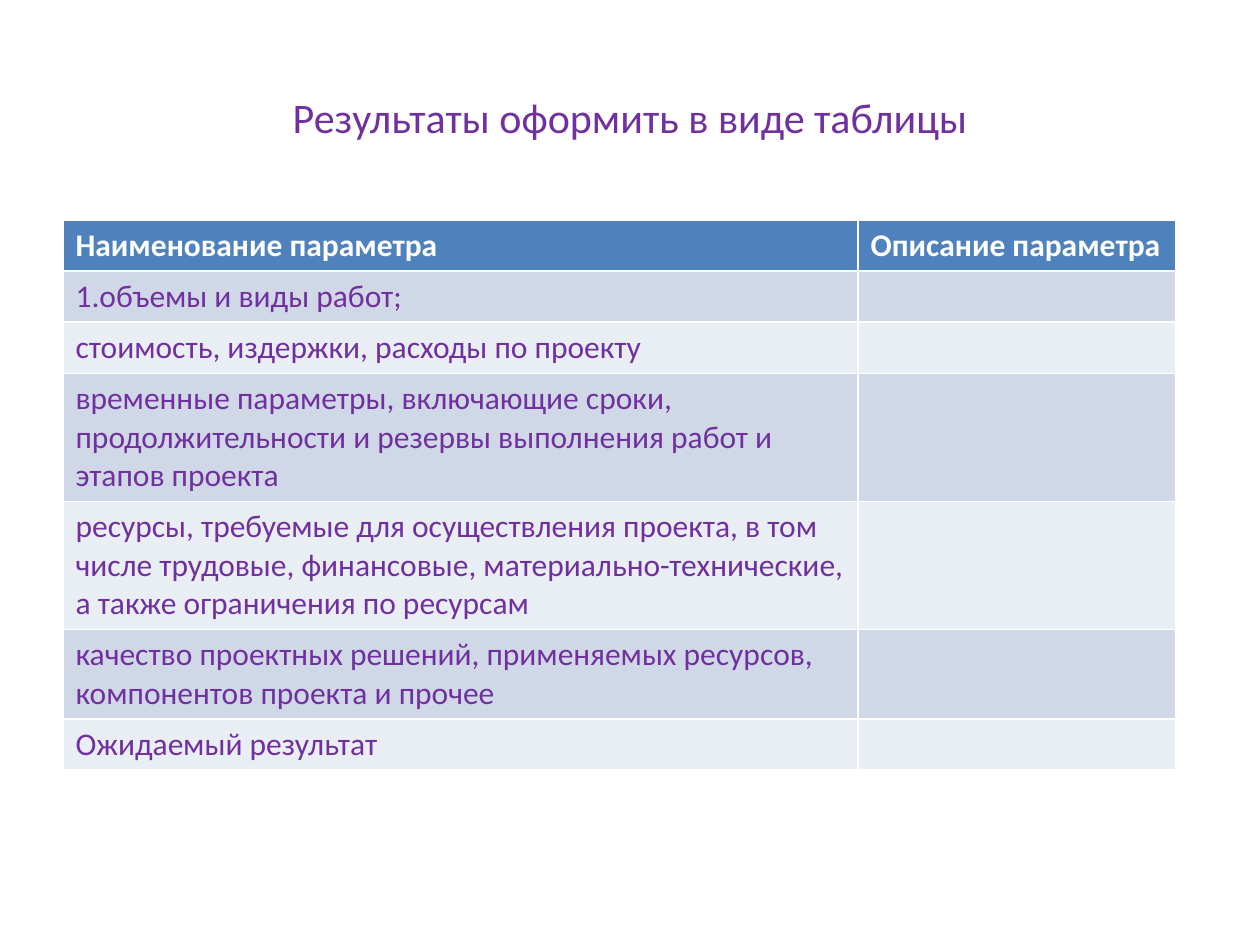
from lxml.etree import SubElement
from pptx import Presentation
from pptx.dml.color import RGBColor
from pptx.enum.text import MSO_ANCHOR, PP_ALIGN
from pptx.oxml.ns import qn
from pptx.util import Emu, Pt

PURPLE = "7030A0"
WHITE = "FFFFFF"
HEADER_FILL = "4F81BD"
BAND_FILLS = ["D0D8E8", "E9EDF4"]
COLUMN_WIDTHS = [795, 318]
ROW_HEIGHT = 51
HEADINGS = ["Наименование параметра", "Описание параметра"]
PARAMETERS = [
    "объемы и виды работ;",
    "стоимость, издержки, расходы по проекту",
    "временные параметры, включающие сроки, продолжительности и резервы "
    "выполнения работ и этапов проекта",
    "ресурсы, требуемые для осуществления проекта, в том числе трудовые, "
    "финансовые, материально-технические, а также ограничения по ресурсам",
    "качество проектных решений, применяемых ресурсов, компонентов проекта "
    "и прочее",
    "Ожидаемый результат",
]


def px(length):
    return Emu(round(length * 914400 / 126))


def color(value):
    return RGBColor.from_string(value)


def format_text(para, size, value, bold=False):
    para.font.size = Pt(size)
    for span in para.runs:
        span.font.name = "Calibri"
        span.font.size = Pt(size)
        span.font.bold = bold
        span.font.color.rgb = color(value)


def add_title(page, text):
    title = page.shapes.title
    title.left, title.top = px(63), px(38)
    title.width, title.height = px(1134), px(158)
    title.text_frame.text = text
    title.text_frame.vertical_anchor = MSO_ANCHOR.MIDDLE
    para = title.text_frame.paragraphs[0]
    para.alignment = PP_ALIGN.CENTER
    format_text(para, 24, PURPLE)


def fill_cell(cell, text, fill, value, bold=False):
    cell.fill.solid()
    cell.fill.fore_color.rgb = color(fill)
    cell.text_frame.text = text
    format_text(cell.text_frame.paragraphs[0], 18, value, bold)


def number_paragraph(para):
    properties = para._p.get_or_add_pPr()
    SubElement(properties, qn("a:buAutoNum"), type="arabicPeriod")


def add_parameter_table(page):
    row_count = len(PARAMETERS) + 1
    frame = page.shapes.add_table(
        row_count, len(HEADINGS), px(63), px(220),
        px(sum(COLUMN_WIDTHS)), px(ROW_HEIGHT * row_count),
    )
    table = frame.table
    for column, width in zip(table.columns, COLUMN_WIDTHS):
        column.width = px(width)
    for row in table.rows:
        row.height = px(ROW_HEIGHT)
    for index, heading in enumerate(HEADINGS):
        fill_cell(table.cell(0, index), heading, HEADER_FILL, WHITE, True)
    for index, parameter in enumerate(PARAMETERS):
        fill = BAND_FILLS[index % 2]
        for column, text in enumerate([parameter, ""]):
            fill_cell(table.cell(index + 1, column), text, fill, PURPLE)
    number_paragraph(table.cell(1, 0).text_frame.paragraphs[0])


def main():
    deck = Presentation()
    deck.slide_width, deck.slide_height = px(1260), px(945)
    page = deck.slides.add_slide(deck.slide_layouts[5])
    add_title(page, "Результаты оформить в виде таблицы")
    add_parameter_table(page)
    deck.save("out.pptx")


if __name__ == "__main__":
    main()
